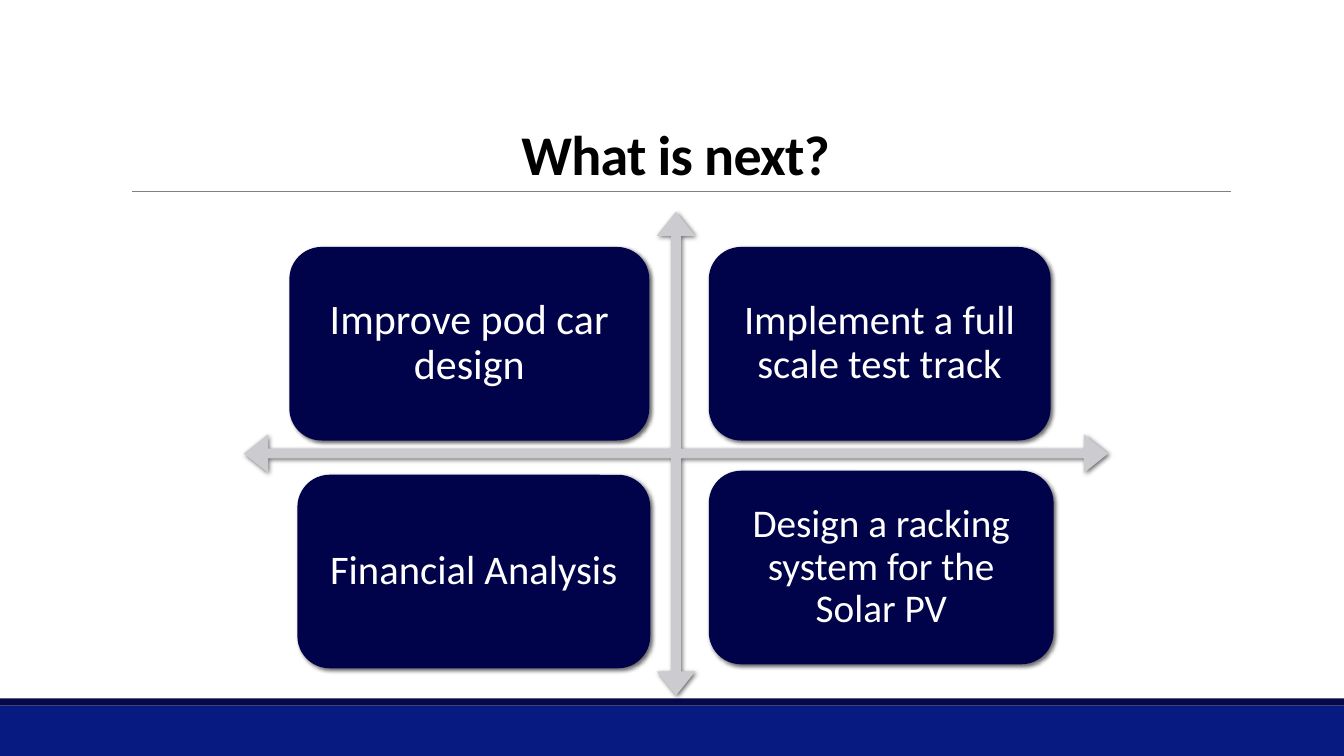
from lxml import etree
from pptx import Presentation
from pptx import util as u
from pptx.dml.color import RGBColor
from pptx.enum import shapes, text
from pptx.oxml.ns import qn

WIDTH, HEIGHT = 13.33, 7.5

deck = Presentation()
deck.slide_width, deck.slide_height = u.Inches(WIDTH), u.Inches(HEIGHT)
slide = deck.slides.add_slide(deck.slide_layouts[6])


def add_block(kind, left, top, width, height, color, shadowed=False):
    block = slide.shapes.add_shape(kind, *map(u.Inches, (left, top, width, height)))
    block.fill.solid()
    block.fill.fore_color.rgb = RGBColor.from_string(color)
    block.line.fill.background()
    block.shadow.inherit = False
    if shadowed:
        effects = block._element.spPr.find(qn("a:effectLst"))
        shadow = etree.SubElement(effects, qn("a:outerShdw"), blurRad=str(u.Pt(3)),
                                  dist=str(u.Pt(2)), dir=str(45 * 60000), rotWithShape="0")
        shade = etree.SubElement(shadow, qn("a:srgbClr"), val="000000")
        etree.SubElement(shade, qn("a:alpha"), val="60000")
    return block


def write_centered(frame, wording, size, color, spacing, anchor):
    frame.word_wrap = True
    frame.vertical_anchor = anchor
    frame.text = wording
    paragraph = frame.paragraphs[0]
    paragraph.alignment = text.PP_ALIGN.CENTER
    paragraph.line_spacing = spacing
    font = paragraph.runs[0].font
    font.name, font.size = "Calibri", u.Pt(size)
    font.color.rgb = RGBColor.from_string(color)
    return font


# Footer bands and the rule below the title
add_block(shapes.MSO_SHAPE.RECTANGLE, 0, 7, WIDTH, 0.5, "061A81")
add_block(shapes.MSO_SHAPE.RECTANGLE, 0, 6.93, WIDTH, 0.07, "060949")
rule = slide.shapes.add_connector(shapes.MSO_CONNECTOR.STRAIGHT, u.Inches(1.31), u.Inches(1.9),
                                  u.Inches(12.21), u.Inches(1.9))
rule.line.color.rgb = RGBColor.from_string("808080")
rule.line.width = u.Pt(0.5)
etree.SubElement(rule._element.spPr, qn("a:effectLst"))

# Four-way arrow with one step in each quadrant
axes = add_block(shapes.MSO_SHAPE.QUAD_ARROW, 2.42, 2.1, 8.57, 4.8, "CCCCD0", True)
for index, share in enumerate((0.02, 0.04, 0.05)):
    axes.adjustments[index] = share

STEP_HEIGHT, STEP_INSET = 1.92, 0.21
steps = [
    ("Improve pod car design", 2.87, 2.45, 3.57, 30),
    ("Implement a full scale test track", 7.03, 2.45, 3.39, 29),
    ("Financial Analysis", 2.95, 4.71, 3.5, 29),
    ("Design a racking system for the Solar PV", 7.03, 4.67, 3.42, 28),
]
for wording, left, top, width, size in steps:
    step = add_block(shapes.MSO_SHAPE.ROUNDED_RECTANGLE, left, top, width, STEP_HEIGHT,
                     "00034A", True)
    frame = step.text_frame
    frame.margin_left = frame.margin_right = u.Inches(STEP_INSET)
    frame.margin_top = frame.margin_bottom = u.Inches(STEP_INSET)
    write_centered(frame, wording, size, "FFFFFF", 0.9, text.MSO_ANCHOR.MIDDLE)

title = slide.shapes.add_textbox(*map(u.Inches, (1.2, 0.31, 11, 1.59)))
title_font = write_centered(title.text_frame, "What is next?", 40, "000000", 0.85,
                            text.MSO_ANCHOR.BOTTOM)
title_font.bold = True
title_font._element.set("spc", "-50")

deck.save("out.pptx")
